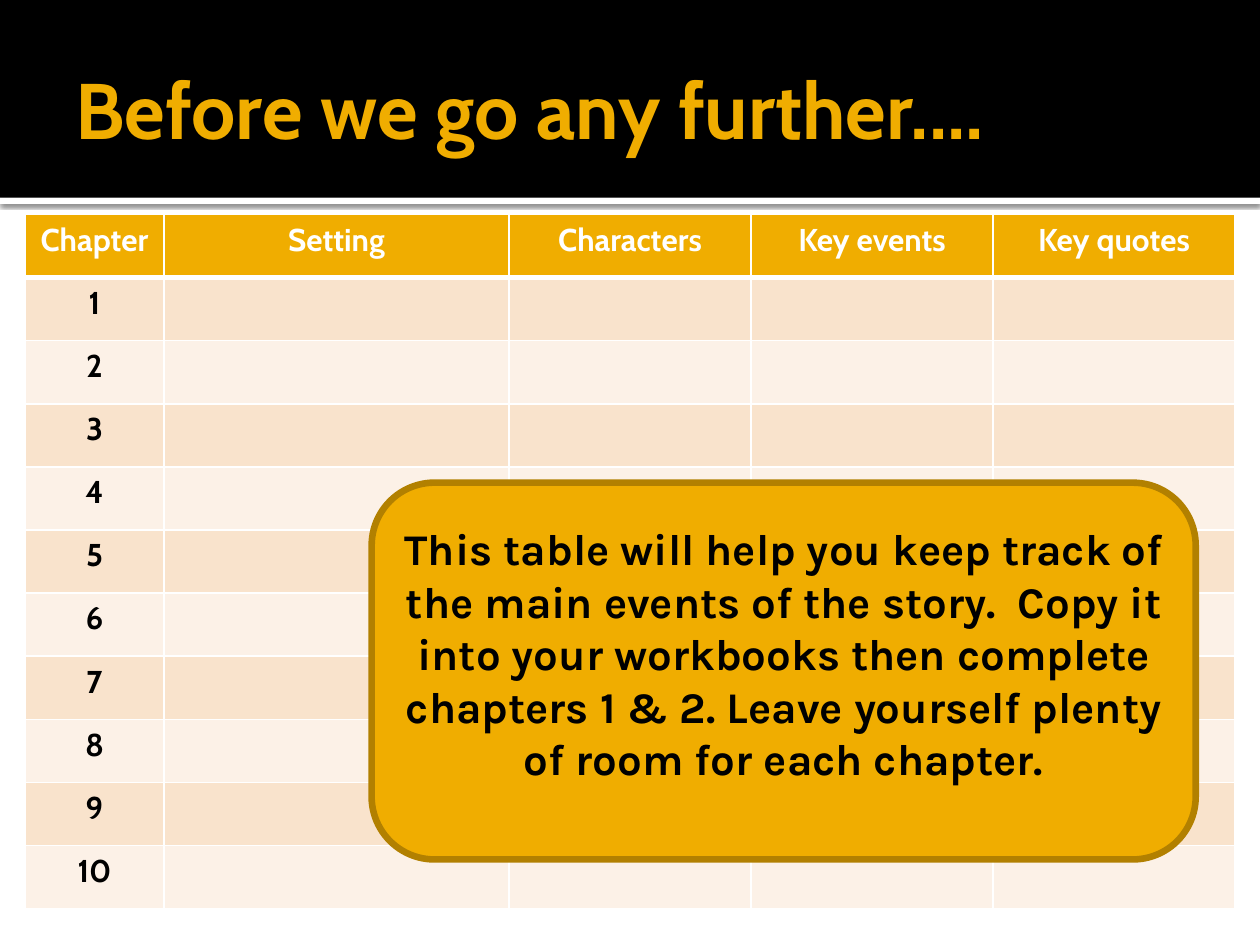
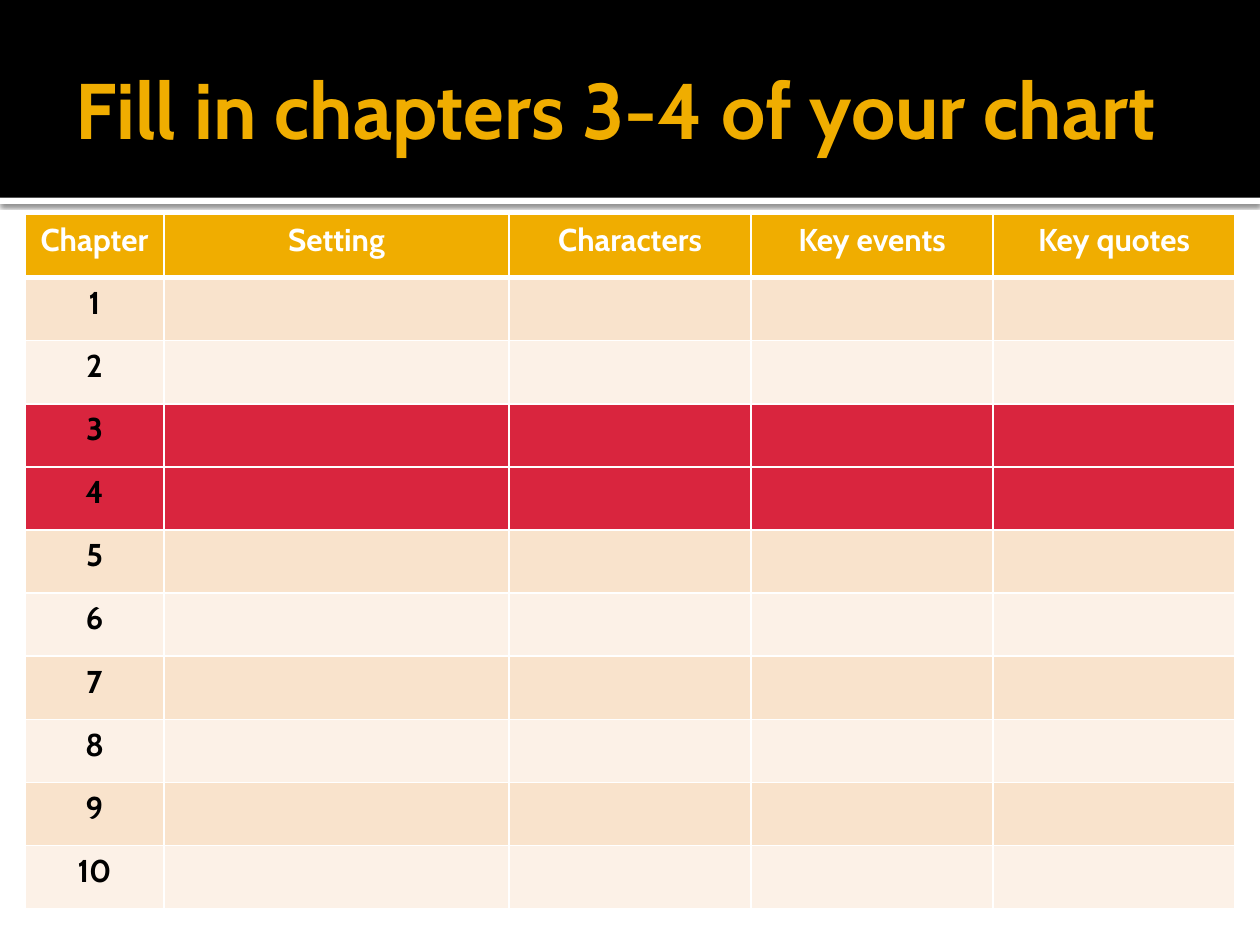
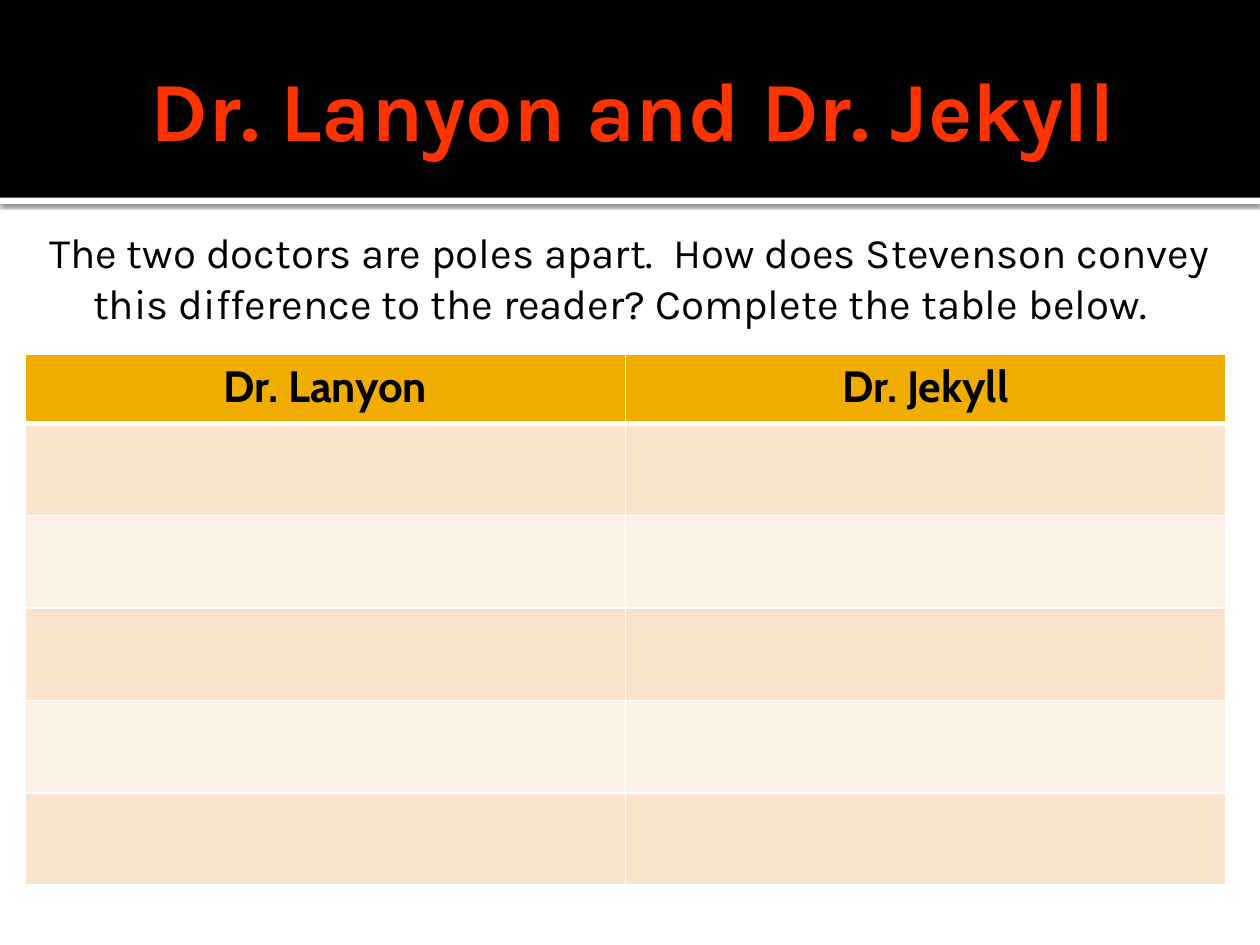
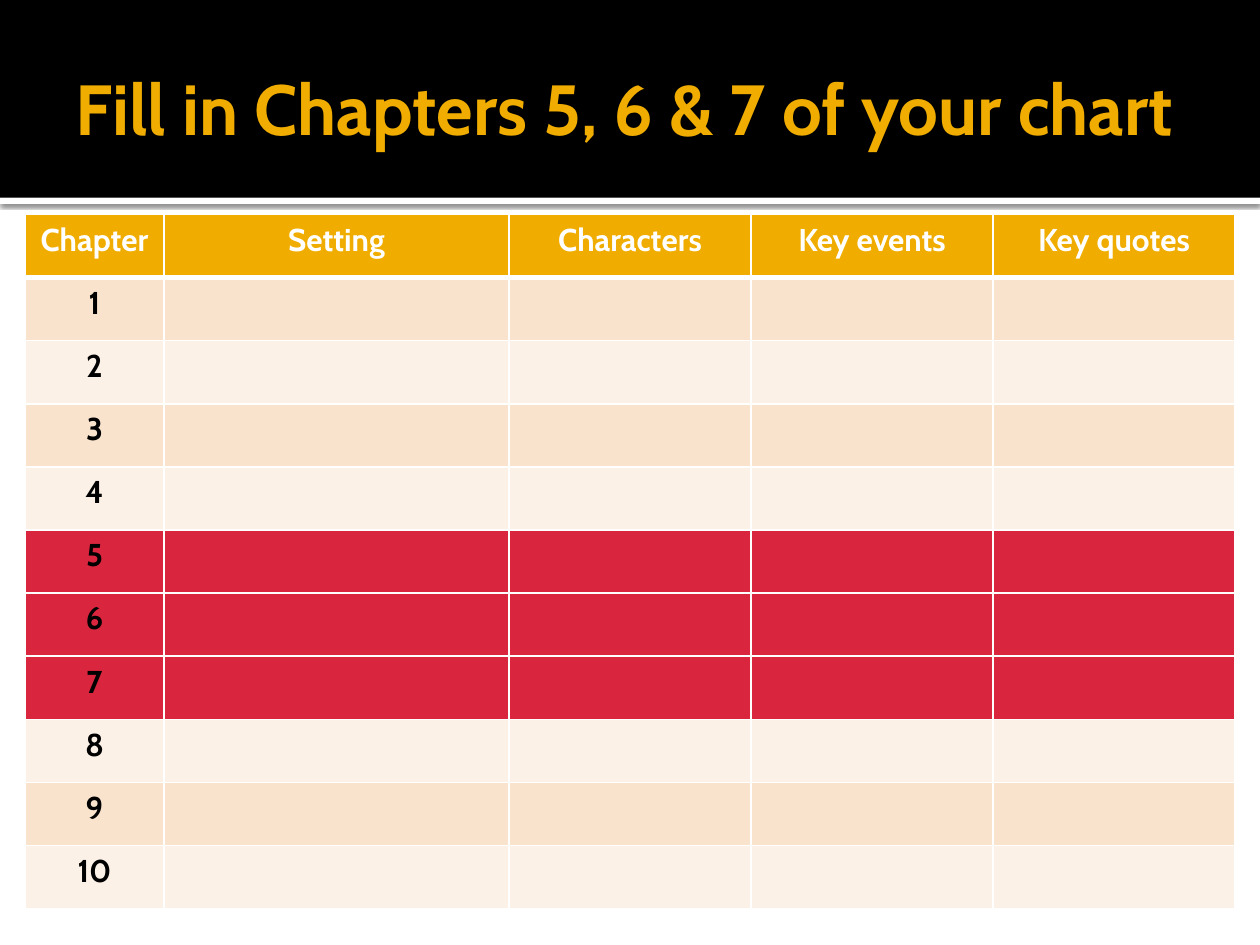
from lxml.etree import SubElement
from pptx import Presentation
from pptx.dml.color import RGBColor
from pptx.enum.shapes import MSO_SHAPE
from pptx.enum.text import MSO_ANCHOR, PP_ALIGN
from pptx.oxml.ns import qn
from pptx.util import Pt

BLACK, WHITE = "000000", "FFFFFF"
GOLD, DARK_GOLD = "F0AD00", "B28000"
ORANGE_RED, HIGHLIGHT = "FF3300", "D9253E"
STRIPES = ("F9E3CC", "FCF1E7")
HEADING_FONT, BODY_FONT = "Cabin", "Karla"

SLIDE_WIDTH, SLIDE_HEIGHT = 720, 540
BAND_HEIGHT, RULE_HEIGHT = 113, 3.6
TABLE_LEFT = 14.4

CHAPTER_HEADERS = ["Chapter", "Setting", "Characters", "Key events", "Key quotes"]
CHAPTER_WIDTHS = [79.2, 197.3, 138.3, 138.3, 138.3]
CHAPTER_COUNT = 10
CHAPTER_SLIDES = [
    {
        "title": "Before we go any further....",
        "size": 45,
        "highlighted": (),
        "callout": "This table will help you keep track of the main events of the story.  "
                   "Copy it into your workbooks then complete chapters 1 & 2. "
                   "Leave yourself plenty of room for each chapter.",
    },
    {"title": "Fill in chapters 3-4 of your chart", "size": 45, "highlighted": (3, 4)},
    {"title": "Fill in Chapters 5, 6 & 7 of your chart", "size": 40.5, "highlighted": (5, 6, 7)},
]
DOCTORS = ["Dr. Lanyon", "Dr. Jekyll"]
DOCTORS_TITLE = "Dr. Lanyon and Dr. Jekyll"
DOCTORS_TASK = (
    "The two doctors are poles apart.  How does Stevenson convey this difference "
    "to the reader? Complete the table below."
)
DOCTORS_ROWS = 5


def rgb(color):
    return RGBColor.from_string(color)


def write(frame, text, font, size, color, bold=False, align=PP_ALIGN.LEFT):
    frame.word_wrap = True
    paragraph = frame.paragraphs[0]
    paragraph.text = text
    paragraph.alignment = align
    paragraph.font.name = font
    paragraph.font.size = Pt(size)
    paragraph.font.bold = bold
    paragraph.font.color.rgb = rgb(color)
    return paragraph


def set_insets(frame, left, top, right, bottom):
    frame.margin_left, frame.margin_top = Pt(left), Pt(top)
    frame.margin_right, frame.margin_bottom = Pt(right), Pt(bottom)


def add_block(slide, kind, left, top, width, height, color):
    """Add a filled shape without outline or shadow."""
    shape = slide.shapes.add_shape(kind, Pt(left), Pt(top), Pt(width), Pt(height))
    shape.shadow.inherit = False
    shape.fill.solid()
    shape.fill.fore_color.rgb = rgb(color)
    shape.line.fill.background()
    return shape


def add_drop_shadow(shape):
    effects = shape._element.spPr.find(qn("a:effectLst"))
    shadow = SubElement(effects, qn("a:outerShdw"), blurRad=str(Pt(2.5)),
                        dist=str(Pt(0.8)), dir="5400000", rotWithShape="0")
    color = SubElement(shadow, qn("a:srgbClr"), val=BLACK)
    SubElement(color, qn("a:alpha"), val="60000")


def add_titled_slide(presentation, title, size, font=HEADING_FONT, color=GOLD,
                     align=PP_ALIGN.LEFT):
    slide = presentation.slides.add_slide(presentation.slide_layouts[6])
    rule = add_block(slide, MSO_SHAPE.RECTANGLE, 0, BAND_HEIGHT, SLIDE_WIDTH, RULE_HEIGHT, WHITE)
    add_drop_shadow(rule)
    add_block(slide, MSO_SHAPE.RECTANGLE, 0, 0, SLIDE_WIDTH, BAND_HEIGHT, BLACK)
    frame = slide.shapes.add_textbox(Pt(36), Pt(12.2), Pt(648), Pt(98.6)).text_frame
    set_insets(frame, 7.2, 3.6, 3.6, 3.6)
    frame.vertical_anchor = MSO_ANCHOR.MIDDLE
    write(frame, title, font, size, color, True, align)
    return slide


def set_borders(cell, top, bottom):
    properties = cell._tc.get_or_add_tcPr()
    for side, width in (("L", 1), ("R", 1), ("T", top), ("B", bottom)):
        line = SubElement(properties, qn(f"a:ln{side}"), w=str(Pt(width)))
        fill = SubElement(line, qn("a:solidFill"))
        SubElement(fill, qn("a:srgbClr"), val=WHITE)


def add_striped_table(slide, top, widths, heights, rows, size, header_color, highlighted=()):
    """Add a table with a gold header over striped rows; highlighted holds row numbers."""
    table = slide.shapes.add_table(len(rows), len(widths), Pt(TABLE_LEFT), Pt(top),
                                   Pt(sum(widths)), Pt(sum(heights))).table
    table.horz_banding = False
    for column, width in zip(table.columns, widths):
        column.width = Pt(width)
    for number, (row, height, texts) in enumerate(zip(table.rows, heights, rows)):
        row.height = Pt(height)
        if number == 0:
            fill = GOLD
        elif number in highlighted:
            fill = HIGHLIGHT
        else:
            fill = STRIPES[(number - 1) % 2]
        for cell, text in zip(row.cells, texts):
            set_borders(cell, 3 if number == 1 else 1, 3 if number == 0 else 1)
            cell.fill.solid()
            cell.fill.fore_color.rgb = rgb(fill)
            color = BLACK if number else header_color
            write(cell.text_frame, text, HEADING_FONT, size, color, True, PP_ALIGN.CENTER)


def add_callout(slide, text):
    callout = add_block(slide, MSO_SHAPE.ROUNDED_RECTANGLE, 212.4, 275.8, 470.9, 215.3, GOLD)
    callout.line.color.rgb = rgb(DARK_GOLD)
    callout.line.width = Pt(3.78)
    frame = callout.text_frame
    set_insets(frame, 7.2, 3.6, 7.2, 24)
    frame.vertical_anchor = MSO_ANCHOR.MIDDLE
    write(frame, text, BODY_FONT, 25, BLACK, True, PP_ALIGN.CENTER)


def add_chapter_slide(presentation, content):
    slide = add_titled_slide(presentation, content["title"], content["size"])
    blanks = [""] * (len(CHAPTER_HEADERS) - 1)
    rows = [CHAPTER_HEADERS]
    rows += [[str(chapter)] + blanks for chapter in range(1, CHAPTER_COUNT + 1)]
    add_striped_table(slide, 122.6, CHAPTER_WIDTHS, [36.07] * len(rows), rows, 18, WHITE,
                      content["highlighted"])
    if "callout" in content:
        add_callout(slide, content["callout"])


def add_doctors_slide(presentation):
    slide = add_titled_slide(presentation, DOCTORS_TITLE, 48, BODY_FONT, ORANGE_RED,
                             PP_ALIGN.CENTER)
    frame = slide.shapes.add_textbox(Pt(TABLE_LEFT), Pt(122.4), Pt(692), Pt(402.5)).text_frame
    set_insets(frame, 4.3, 7.2, 7.2, 3.6)
    paragraph = write(frame, DOCTORS_TASK, BODY_FONT, 24, BLACK)
    properties = paragraph._p.get_or_add_pPr()
    properties.set("marL", str(Pt(34.56)))
    properties.set("indent", str(Pt(-25.2)))
    rows = [DOCTORS] + [[""] * len(DOCTORS)] * DOCTORS_ROWS
    add_striped_table(slide, 202.3, [343] * len(DOCTORS), [39.6] + [52.8] * DOCTORS_ROWS,
                      rows, 25, BLACK)


def main():
    presentation = Presentation()
    presentation.slide_width, presentation.slide_height = Pt(SLIDE_WIDTH), Pt(SLIDE_HEIGHT)
    opening, first_check, second_check = CHAPTER_SLIDES
    add_chapter_slide(presentation, opening)
    add_chapter_slide(presentation, first_check)
    add_doctors_slide(presentation)
    add_chapter_slide(presentation, second_check)
    presentation.save("out.pptx")


if __name__ == "__main__":
    main()
